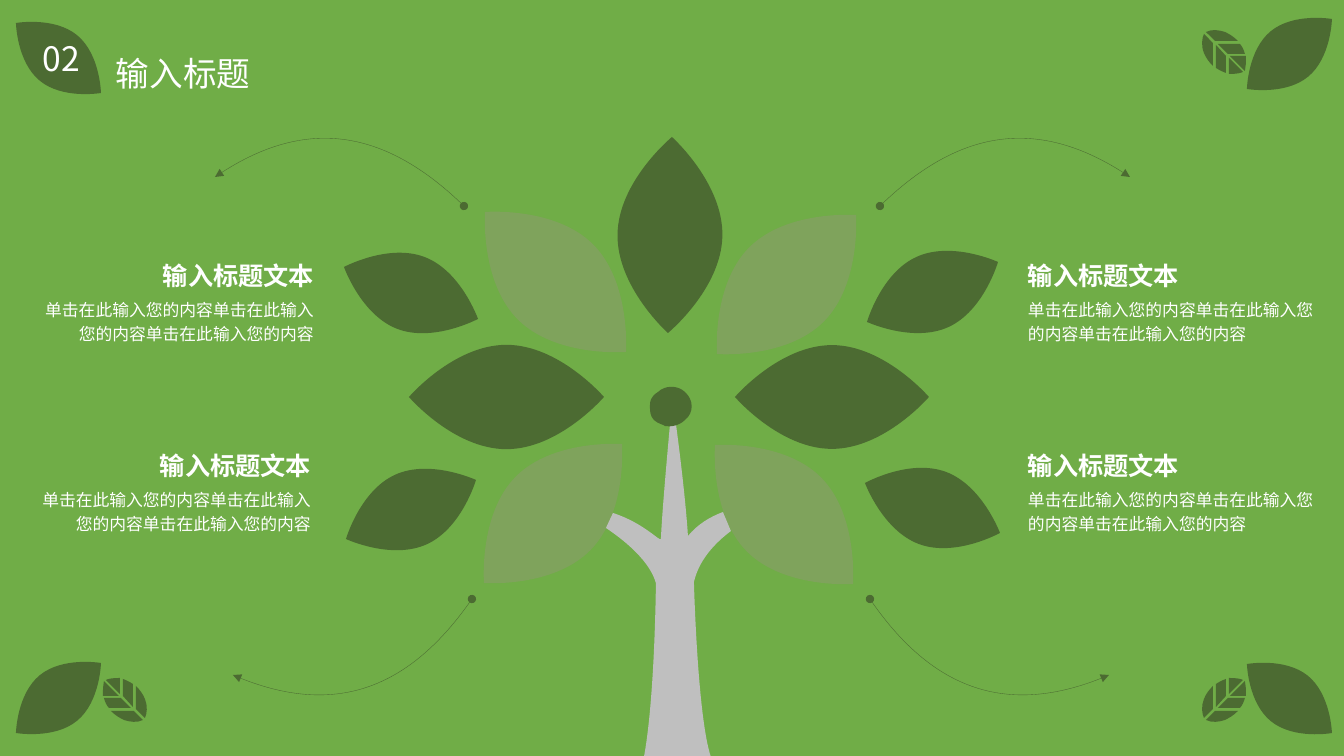
from dataclasses import dataclass

from lxml.etree import Element, SubElement
from pptx import Presentation
from pptx.dml.color import RGBColor
from pptx.enum.text import MSO_ANCHOR, MSO_AUTO_SIZE, PP_ALIGN
from pptx.oxml.ns import qn
from pptx.util import Emu, Pt

SCALE = 914400 / 100.8


@dataclass(frozen=True)
class Theme:
    ground: str = "70AD47"
    dark: str = "4C6B32"
    pale: str = "7FA35C"
    bark: str = "BFBFBF"
    ink: str = "FFFFFF"
    font: str = "Noto Sans CJK SC"
    title: int = 24
    head: int = 18
    body: int = 12
    line: float = 0.25


@dataclass(frozen=True)
class Leaf:
    base: complex
    tip: complex
    color: str


@dataclass(frozen=True)
class Sprig:
    x: int
    y: int
    flip_x: int
    flip_y: int


@dataclass(frozen=True)
class Note:
    edge: int
    top: int
    width: int
    right: bool


# A step is a point (x, y) or a cubic curve (x1, y1, x2, y2, x, y).
Outline = list[tuple[float, ...]]

THEME = Theme()
DARK, PALE = THEME.dark, THEME.pale
LEAVES = [
    Leaf(485 + 212j, 626 + 352j, PALE), Leaf(717 + 354j, 856 + 215j, PALE),
    Leaf(715 + 445j, 853 + 584j, PALE), Leaf(622 + 444j, 484 + 583j, PALE),
    Leaf(668 + 333j, 672 + 137j, DARK),
    Leaf(409 + 397j, 604 + 397j, DARK), Leaf(735 + 397j, 929 + 397j, DARK),
    Leaf(344 + 267j, 478 + 319j, DARK), Leaf(476 + 480j, 346 + 539j, DARK),
    Leaf(867 + 322j, 998 + 262j, DARK), Leaf(865 + 483j, 1000 + 533j, DARK),
    Leaf(16 + 23j, 101 + 93j, DARK), Leaf(16 + 733j, 101 + 663j, DARK),
    Leaf(1332 + 733j, 1247 + 664j, DARK), Leaf(1332 + 19j, 1247 + 89j, DARK),
]
TRUNK: Outline = [
    (688, 536), (688, 536, 686, 499, 676, 424), (670, 425),
    (667, 458, 662, 514, 661, 539), (660, 542, 644, 523, 613, 513),
    (606, 528), (627, 542, 650, 562, 656, 583),
    (656, 583, 655, 705, 643, 762), (643, 762, 686, 750, 714, 764),
    (698, 737, 694, 582, 694, 582), (699, 560, 715, 543, 731, 531),
    (723, 512), (710, 517, 698, 524, 688, 536),
]
HUB: Outline = [
    (685, 420), (694, 413, 694, 400, 685, 392), (678, 385, 665, 385, 658, 392),
    (650, 397, 650, 402, 650, 406), (650, 411, 650, 416, 654, 420),
    (658, 424, 665, 425, 665, 426), (670, 427, 679, 426, 685, 420),
]
VEINED: list[Outline] = [
    [(33, 31), (33, 8), (37, 12, 40, 16, 42, 21), (45, 28, 44, 36, 42, 40)],
    [(20, 18), (20, 1), (23, 2, 27, 4, 30, 6), (30, 29)],
    [(8, 33), (31, 33), (40, 42), (34, 45, 27, 44, 21, 42),
     (17, 40, 13, 38, 8, 33)],
    [(3, 2), (5, 1, 8, 0, 17, 0), (17, 16)],
    [(1, 20), (18, 20), (28, 30), (6, 30), (4, 28, 2, 24, 1, 20)],
    [(0, 13), (0, 8, 1, 5, 1, 3), (16, 18), (0, 18)],
]
SPRIGS = [Sprig(103, 678, 1, 1), Sprig(1246, 678, -1, 1), Sprig(1246, 74, -1, -1)]
ARROWS: list[Outline] = [
    [(1130, 177), (1043, 118, 960, 128, 880, 206)],
    [(1109, 675), (1012, 717, 932, 690, 870, 599)],
    [(215, 177), (301, 118, 384, 128, 464, 206)],
    [(233, 675), (330, 717, 409, 690, 472, 599)],
]
NOTES = [Note(1020, 260, 311, False), Note(322, 260, 295, True),
         Note(1020, 450, 311, False), Note(319, 450, 286, True)]
HEAD = "输入标题文本"
BODY = "单击在此输入您的内容" * 3


def px(value: float) -> Emu:
    return Emu(round(value * SCALE))


def draw(slide, parts: list[Outline], closed: bool = True):
    """Build one freeform from outlines, then bend the curved segments."""
    pen = None
    for part in parts:
        first, *rest = [(px(step[-2]), px(step[-1])) for step in part]
        if pen is None:
            pen = slide.shapes.build_freeform(*first)
        else:
            pen.move_to(*first)
        pen.add_line_segments(rest, close=closed)
    shape = pen.convert_to_shape()
    shape.shadow.inherit = False
    lines = list(shape._element.iter(qn("a:lnTo")))
    steps = [step for part in parts for step in part[1:]]
    for line, step in zip(lines, steps):
        if len(step) == 6:
            line.tag = qn("a:cubicBezTo")
            for i in range(2):
                x, y = px(step[2 * i]) - shape.left, px(step[2 * i + 1]) - shape.top
                line.insert(i, Element(qn("a:pt"), x=str(x), y=str(y)))
    return shape


def paint(slide, parts: list[Outline], color: str) -> None:
    shape = draw(slide, parts)
    shape.fill.solid()
    shape.fill.fore_color.rgb = RGBColor.from_string(color)
    shape.line.fill.background()


def blade(leaf: Leaf) -> Outline:
    """Curve both sides of a leaf around the axis between its ends."""
    half = (leaf.tip - leaf.base) / 2
    mid = leaf.base + half
    steps: Outline = [(leaf.base.real, leaf.base.imag)]
    for end, along in ((leaf.base, half), (leaf.tip, -half)):
        bulge = mid - along * 0.535j
        far = mid + along
        for nodes in ((end, bulge - along * 0.54, bulge),
                      (bulge + along * 0.54, far, far)):
            steps.append(tuple(v for n in nodes for v in (n.real, n.imag)))
    return steps


def place(sprig: Sprig) -> list[Outline]:
    """Move and mirror the veined leaf."""
    base, flip = (sprig.x, sprig.y), (sprig.flip_x, sprig.flip_y)
    return [[tuple(base[i % 2] + flip[i % 2] * v for i, v in enumerate(step))
             for step in part] for part in VEINED]


def arrow(slide, steps: Outline) -> None:
    shape = draw(slide, [steps], closed=False)
    shape.fill.background()
    shape.line.color.rgb = RGBColor.from_string(THEME.dark)
    shape.line.width = Pt(THEME.line)
    line = shape._element.spPr.find(qn("a:ln"))
    SubElement(line, qn("a:headEnd"), type="triangle")
    SubElement(line, qn("a:tailEnd"), type="oval")


def write(slide, box: tuple[int, int, int, int], text: str, size: int, bold: bool = False):
    frame = slide.shapes.add_textbox(*map(px, box)).text_frame
    frame.text = text
    run = frame.paragraphs[0].runs[0]
    run.font.size = Pt(size)
    run.font.bold = bold
    run.font.name = THEME.font
    run.font.color.rgb = RGBColor.from_string(THEME.ink)
    SubElement(run._r.get_or_add_rPr(), qn("a:ea"), typeface=THEME.font)
    return frame


def annotate(slide, note: Note) -> None:
    """Write a heading with its body text below."""
    for text, top, wide, high, size in (
        (HEAD, note.top, 268, 27, THEME.head),
        (BODY, note.top + 27, note.width, 65, THEME.body),
    ):
        left = note.edge - wide if note.right else note.edge
        frame = write(slide, (left, top, wide, high), text, size, text == HEAD)
        frame.word_wrap = True
        frame.margin_left = frame.margin_right = px(8)
        frame.margin_top = frame.margin_bottom = 0
        line = frame.paragraphs[0]
        line.alignment = PP_ALIGN.RIGHT if note.right else PP_ALIGN.LEFT
        if text == BODY:
            line.line_spacing = 1.2
            frame.vertical_anchor = MSO_ANCHOR.MIDDLE


def main() -> None:
    deck = Presentation()
    deck.slide_width, deck.slide_height = px(1344), px(756)
    slide = deck.slides.add_slide(deck.slide_layouts[6])
    slide.background.fill.solid()
    slide.background.fill.fore_color.rgb = RGBColor.from_string(THEME.ground)
    for note in NOTES:
        annotate(slide, note)
    for steps in ARROWS:
        arrow(slide, steps)
    for leaf in LEAVES:
        paint(slide, [blade(leaf)], leaf.color)
    paint(slide, [TRUNK], THEME.bark)
    paint(slide, [HUB], THEME.dark)
    for sprig in SPRIGS:
        paint(slide, place(sprig), THEME.dark)
    for box, text in (((106, 48, 156, 50), "输入标题"), ((33, 33, 60, 50), "02")):
        frame = write(slide, box, text, THEME.title)
        frame.word_wrap = False
        frame.auto_size = MSO_AUTO_SIZE.SHAPE_TO_FIT_TEXT
    deck.save("out.pptx")


if __name__ == "__main__":
    main()
